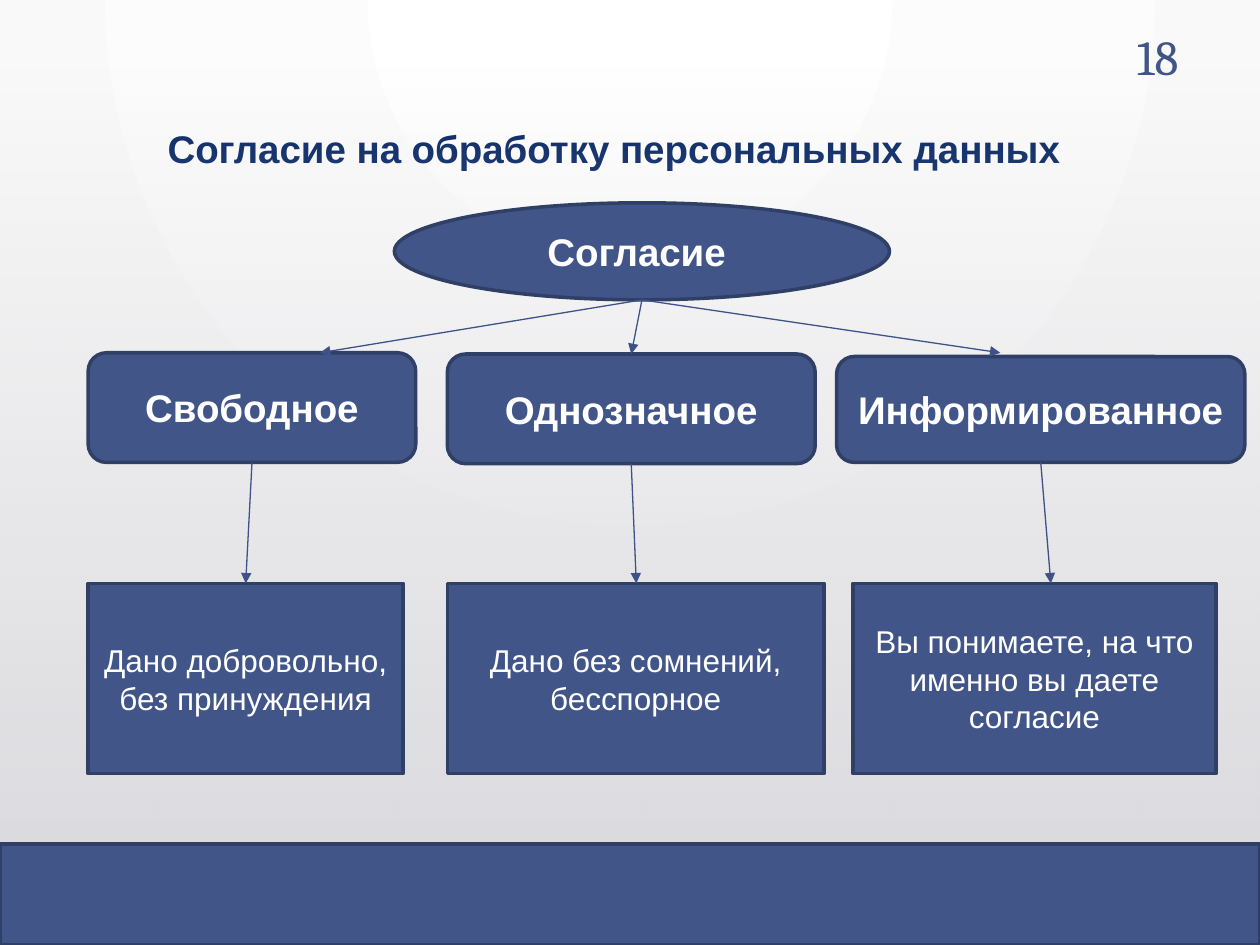
from lxml import etree
from pptx import Presentation
from pptx.dml.color import RGBColor
from pptx.enum.shapes import MSO_CONNECTOR as Link, MSO_SHAPE as Kind
from pptx.enum.text import MSO_ANCHOR as Anchor, PP_ALIGN as Align
from pptx.oxml import parse_xml
from pptx.oxml.ns import nsdecls, qn
from pptx.util import Inches, Pt

# Content
TITLE = "Согласие на обработку персональных данных"
NUMBER = "18"
ROOT = ("Согласие ", (3.13, 1.61, 3.93, 0.77))
# Each column: trait and its box, meaning and its left and width, ends of the two arrows
COLUMNS = [
    ("Свободное", (0.7, 2.8, 2.6, 0.87),
     "Дано добровольно, без принуждения", (0.7, 2.5), (2.54, 2.8), 1.95),
    ("Однозначное", (3.55, 2.81, 2.92, 0.87),
     "Дано без сомнений, бесспорное", (3.55, 2.99), (5.01, 2.81), 5.05),
    ("Информированное", (6.64, 2.83, 3.24, 0.84),
     "Вы понимаете, на что именно вы даете согласие", (6.77, 2.88), (7.94, 2.8), 8.34),
]
CARD_TOP, CARD_HIGH = 4.63, 1.51
COLORS = {
    "blue": "415588", "edge": "303F65", "arrow": "3E5287", "title": "002060",
    "white": "FFFFFF", "pale": "F9F9F9", "fog": "DCDCE0", "mist": "DEDEE2", "black": "000001",
}


def rgb(name):
    return RGBColor.from_string(COLORS[name])


def grad(first, last, shade, alpha=100):
    """Gradient fill from first (with its opacity) to last; shade gives its direction."""
    return parse_xml(
        f'<a:gradFill {nsdecls("a")} rotWithShape="1"><a:gsLst>'
        f'<a:gs pos="0"><a:srgbClr val="{COLORS[first]}"><a:alpha val="{alpha * 1000}"/>'
        f'</a:srgbClr></a:gs><a:gs pos="100000"><a:srgbClr val="{COLORS[last]}"/></a:gs>'
        f'</a:gsLst>{shade}</a:gradFill>')


def swap(fill, new):
    """Put a gradient in place of the one that the fill holds."""
    old = fill.find(qn("a:gradFill"))
    fill.replace(old, new)


def style(frame, text, size, color, align, bold=False, face="Arial"):
    frame.word_wrap = True
    frame.text = text
    para = frame.paragraphs[0]
    para.alignment = align
    font = para.font
    font.name, font.size, font.bold = face, Pt(size), bold
    font.color.rgb = rgb(color)
    return para


def box(kind, place, text="", size=22, bold=True):
    shape = slide.shapes.add_shape(kind, *map(Inches, place))
    shape.shadow.inherit = False
    shape.fill.solid()
    shape.fill.fore_color.rgb = rgb("blue")
    shape.line.color.rgb = rgb("edge")
    shape.line.width = Pt(2)
    if text:
        style(shape.text_frame, text, size, "white", Align.CENTER, bold)
        shape.text_frame.vertical_anchor = Anchor.MIDDLE
    return shape


def line(start, end, color, width):
    link = slide.shapes.add_connector(Link.STRAIGHT, *map(Inches, start + end))
    link.line.color.rgb = rgb(color)
    link.line.width = Pt(width)
    etree.SubElement(link.element.spPr, qn("a:effectLst"))
    return link


def arrow(start, end):
    link = line(start, end, "arrow", 0.75)
    etree.SubElement(link.line._get_or_add_ln(), qn("a:tailEnd"), type="triangle")


def foot(place):
    """Middle of the lower edge."""
    left, top, wide, high = place
    return left + wide / 2, top + high


deck = Presentation()
deck.slide_width, deck.slide_height = Inches(10), Inches(7.5)
slide = deck.slides.add_slide(deck.slide_layouts[5])

# Background: round glow, then a haze that thickens downwards
slide.background.fill.gradient()
glow = '<a:path path="circle"><a:fillToRect l="50000" t="0" r="50000" b="100000"/></a:path>'
swap(slide.element.cSld.find(qn("p:bg")).find(qn("p:bgPr")), grad("white", "pale", glow))
haze = box(Kind.RECTANGLE, (0, 0.51, 10, 6.17))
haze.line.fill.background()
haze.fill.gradient()
swap(haze.element.spPr, grad("fog", "mist", '<a:lin ang="5400000" scaled="0"/>', 0))

# Bottom band with a faint rule above it
rule = line((0, 6.69), (10, 6.69), "black", 1)
tint = next(rule.line._get_or_add_ln().iter(qn("a:srgbClr")))
etree.SubElement(tint, qn("a:alpha"), val="20000")
box(Kind.RECTANGLE, (0, 6.7, 10, 0.8))

# Title and slide number
title = slide.shapes.title
title.left, title.top, title.width, title.height = map(Inches, (1.23, 0.98, 8.22, 0.69))
style(title.text_frame, TITLE, 22, "title", Align.LEFT, True).line_spacing = 0.9
title.text_frame.vertical_anchor = Anchor.TOP
number = slide.shapes.add_textbox(*map(Inches, (8.58, 0.16, 0.87, 0.55)))
style(number.text_frame, NUMBER, 28, "blue", Align.RIGHT, face="Cambria")

# Tree: root, traits, meanings
box(Kind.OVAL, ROOT[1], ROOT[0])
for trait, place, meaning, (left, wide), tip, drop in COLUMNS:
    box(Kind.ROUNDED_RECTANGLE, place, trait)
    box(Kind.RECTANGLE, (left, CARD_TOP, wide, CARD_HIGH), meaning, 18, False)
    arrow(foot(ROOT[1]), tip)
    arrow(foot(place), (drop, CARD_TOP))

deck.save("out.pptx")
